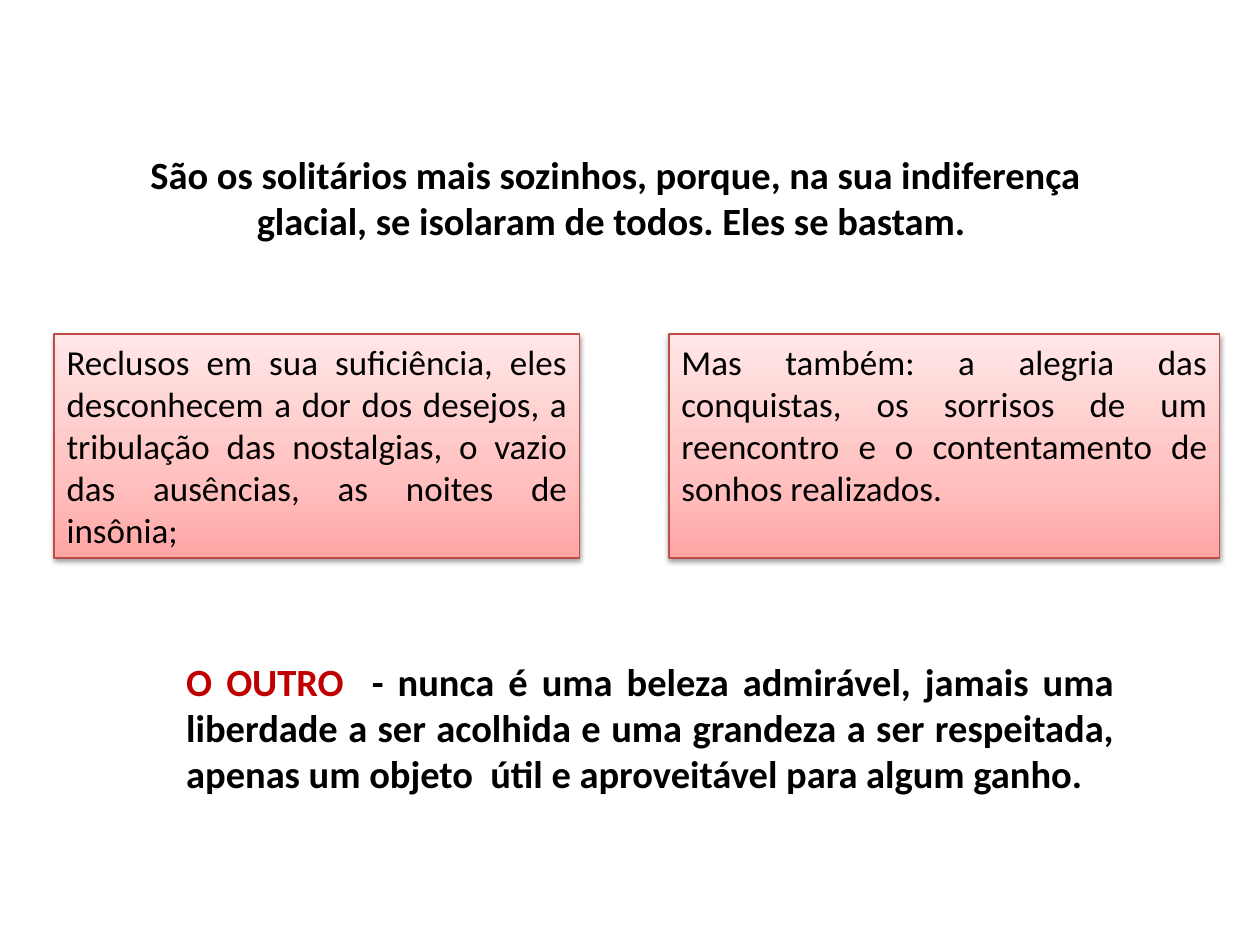
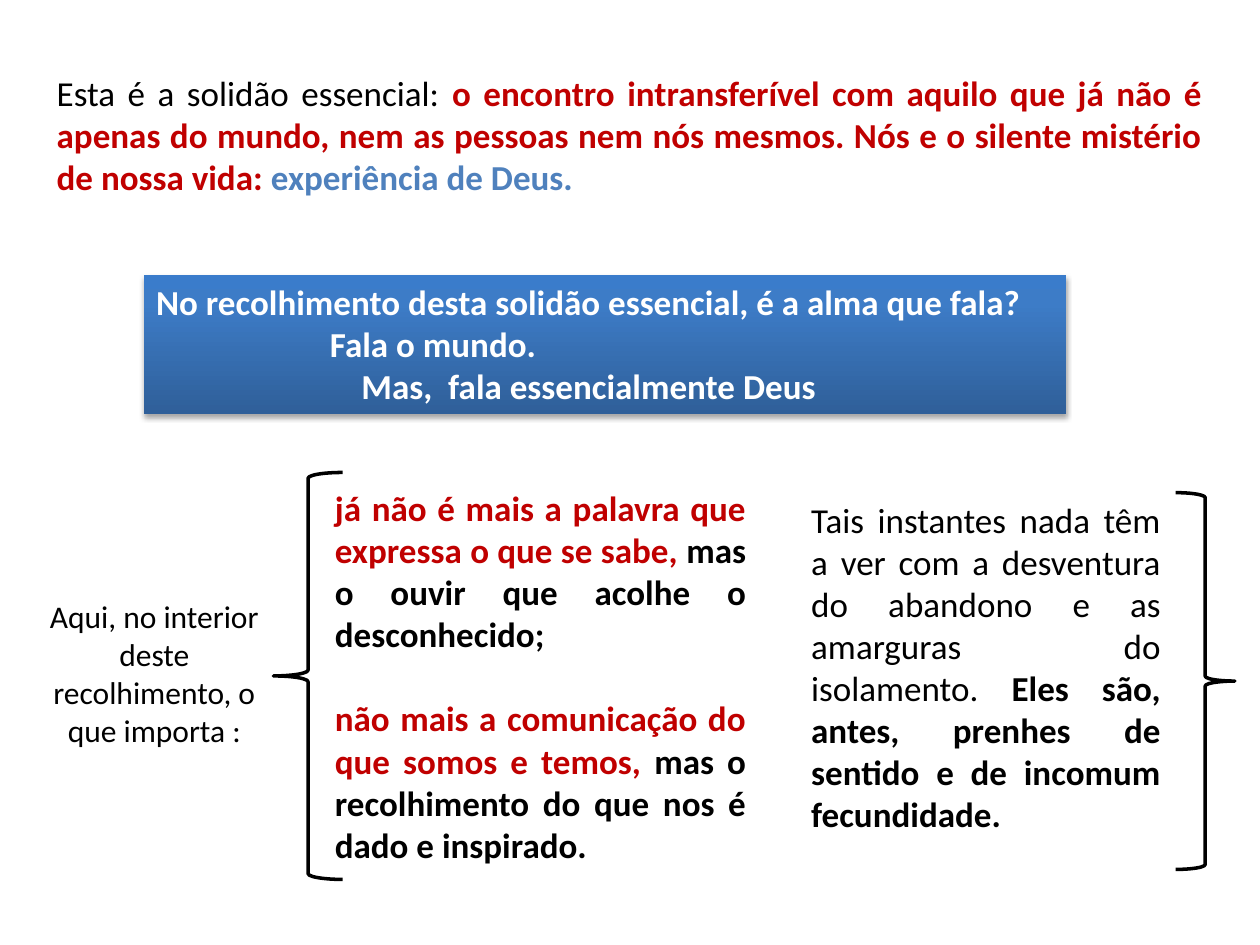
from dataclasses import dataclass

from lxml.etree import SubElement
from pptx import Presentation
from pptx.dml.color import RGBColor
from pptx.enum.shapes import MSO_SHAPE
from pptx.enum.text import MSO_ANCHOR, MSO_AUTO_SIZE, PP_ALIGN
from pptx.oxml.ns import qn
from pptx.shapes.autoshape import Shape
from pptx.slide import Slide
from pptx.util import Inches, Pt

FONT = "Calibri"
BLACK = RGBColor(0x00, 0x00, 0x00)
WHITE = RGBColor(0xFF, 0xFF, 0xFF)
RED = RGBColor(0xC0, 0x00, 0x00)
BLUE = RGBColor(0x4F, 0x81, 0xBD)
ROSE_BORDER = RGBColor(0xBF, 0x4C, 0x48)
ROSE_STOPS = (
    (0, RGBColor(0xFF, 0xA6, 0xA5)),
    (35, RGBColor(0xFF, 0xC0, 0xBF)),
    (100, RGBColor(0xFF, 0xE7, 0xE7)),
)
BLUE_STOPS = (
    (0, RGBColor(0x2F, 0x5F, 0x99)),
    (80, RGBColor(0x3D, 0x7C, 0xC7)),
    (100, RGBColor(0x3A, 0x7C, 0xCB)),
)
TITLE_ONLY = 5


@dataclass(frozen=True)
class Area:
    left: float
    top: float
    width: float
    height: float

    def lengths(self) -> tuple[int, int, int, int]:
        return (Inches(self.left), Inches(self.top),
                Inches(self.width), Inches(self.height))


@dataclass(frozen=True)
class Run:
    text: str
    color: RGBColor = BLACK
    bold: bool = False


@dataclass(frozen=True)
class Para:
    runs: tuple[Run, ...]
    align: PP_ALIGN = PP_ALIGN.JUSTIFY
    indent: float = 0
    space_before: float = 0


@dataclass(frozen=True)
class Panel:
    """Look of a shaded box with a soft shadow below it."""
    stops: tuple[tuple[int, RGBColor], ...]
    border: RGBColor | None
    shadow_opacity: int
    shadow_distance: float


ROSE_PANEL = Panel(ROSE_STOPS, ROSE_BORDER, 38, 1.6)
BLUE_PANEL = Panel(BLUE_STOPS, None, 35, 1.8)


def write(shape: Shape, paras: tuple[Para, ...], size: int = 20) -> None:
    frame = shape.text_frame
    frame.word_wrap = True
    frame.auto_size = MSO_AUTO_SIZE.NONE
    frame.vertical_anchor = MSO_ANCHOR.TOP
    for index, para in enumerate(paras):
        paragraph = frame.add_paragraph() if index else frame.paragraphs[0]
        paragraph.alignment = para.align
        if para.indent:
            paragraph._p.get_or_add_pPr().set("marL", str(Inches(para.indent)))
        if para.space_before:
            paragraph.space_before = Pt(para.space_before)
        for part in para.runs:
            run = paragraph.add_run()
            run.text = part.text
            run.font.name = FONT
            run.font.size = Pt(size)
            run.font.bold = part.bold
            run.font.color.rgb = part.color


def add_title(slide: Slide, area: Area, para: Para, size: int = 20) -> None:
    title = slide.shapes.title
    title.left, title.top, title.width, title.height = area.lengths()
    write(title, (para,), size)


def add_text(slide: Slide, area: Area, *paras: Para, size: int = 20) -> None:
    write(slide.shapes.add_textbox(*area.lengths()), paras, size)


def add_color(parent, color: RGBColor):
    return SubElement(parent, qn("a:srgbClr"), val=str(color))


def add_panel(slide: Slide, area: Area, look: Panel, *paras: Para) -> None:
    panel = slide.shapes.add_shape(MSO_SHAPE.RECTANGLE, *area.lengths())
    panel.fill.gradient()
    panel.fill.gradient_angle = 90
    properties = panel._element.spPr
    stop_list = properties.find(".//" + qn("a:gsLst"))
    for default_stop in list(stop_list):
        stop_list.remove(default_stop)
    for position, color in look.stops:
        add_color(SubElement(stop_list, qn("a:gs"), pos=str(position * 1000)), color)

    if look.border is None:
        panel.line.fill.background()
    else:
        panel.line.color.rgb = look.border
        panel.line.width = Pt(0.75)

    panel.shadow.inherit = False
    shadow = SubElement(
        properties.find(qn("a:effectLst")), qn("a:outerShdw"),
        blurRad=str(Pt(3.1)), dist=str(Pt(look.shadow_distance)),
        dir="5400000", rotWithShape="0")
    SubElement(add_color(shadow, BLACK), qn("a:alpha"),
               val=str(look.shadow_opacity * 1000))
    write(panel, paras)


def add_brace(slide: Slide, area: Area, rotation: int = 0) -> None:
    brace = slide.shapes.add_shape(MSO_SHAPE.LEFT_BRACE, *area.lengths())
    brace.rotation = rotation
    brace.fill.background()
    brace.line.color.rgb = BLACK
    brace.line.width = Pt(2)
    brace.shadow.inherit = False


def build_indifference(slide: Slide) -> None:
    add_title(slide, Area(0.75, 1.15, 8.27, 0.84), Para((
        Run("São os solitários mais sozinhos, porque, na sua indiferença "
            "glacial, se isolaram de todos. Eles se bastam. ", bold=True),
    ), PP_ALIGN.CENTER), size=22)

    losses = (
        (0.43, 4.17, "Reclusos em sua suficiência, eles desconhecem a dor dos "
                     "desejos, a tribulação das nostalgias, o vazio das "
                     "ausências, as noites de insônia;"),
        (5.31, 4.37, "Mas também: a alegria das conquistas, os sorrisos de um "
                     "reencontro e o contentamento de sonhos realizados."),
    )
    for left, width, loss in losses:
        add_panel(slide, Area(left, 2.65, width, 1.78), ROSE_PANEL,
                  Para((Run(loss),)))

    add_text(slide, Area(1.38, 5.17, 7.56, 1.21), Para((
        Run("O OUTRO  ", RED, True),
        Run("- nunca é uma beleza admirável, jamais uma liberdade a ser "
            "acolhida e uma grandeza a ser respeitada, apenas um objeto  útil "
            "e aproveitável para algum ganho.", bold=True),
    )), size=22)


def build_essential_solitude(slide: Slide) -> None:
    add_title(slide, Area(0.35, 0.52, 9.29, 1.11), Para((
        Run("Esta é a solidão essencial: "),
        Run("o encontro intransferível com aquilo que já não é apenas do "
            "mundo, nem as pessoas nem nós mesmos. Nós e o silente mistério "
            "de nossa vida: ", RED, True),
        Run("experiência de Deus.", BLUE, True),
    )))

    voices = (
        (0, "No recolhimento desta solidão essencial, é a alma que fala?"),
        (1.38, "Fala o mundo."),
        (1.63, "Mas,  fala essencialmente Deus"),
    )
    add_panel(slide, Area(1.14, 2.18, 7.32, 1.11), BLUE_PANEL, *(
        Para((Run(voice, WHITE, True),), PP_ALIGN.LEFT, indent)
        for indent, voice in voices))

    add_text(slide, Area(0.28, 4.69, 1.89, 1.31), Para((
        Run("Aqui, no interior deste recolhimento, o que importa :"),
    ), PP_ALIGN.CENTER), size=18)

    add_text(
        slide, Area(2.56, 3.81, 3.46, 3.13),
        Para((
            Run("já não é mais a palavra que expressa o que se sabe, ", RED, True),
            Run("mas o ouvir que acolhe o desconhecido;", bold=True),
        )),
        Para((
            Run("não mais a comunicação do que somos e temos, ", RED, True),
            Run("mas o recolhimento do que nos é dado e inspirado.", bold=True),
        ), space_before=24.4))

    add_text(slide, Area(6.34, 3.91, 2.97, 2.79), Para((
        Run("Tais instantes nada têm a ver com a desventura do abandono e as "
            "amarguras do isolamento. "),
        Run("Eles são, antes, prenhes de sentido e de incomum fecundidade.",
            bold=True),
    )))

    add_brace(slide, Area(2.17, 3.75, 0.55, 3.23))
    add_brace(slide, Area(9.33, 3.91, 0.47, 2.99), rotation=180)


def main() -> None:
    deck = Presentation()
    deck.slide_width, deck.slide_height = Inches(10), Inches(7.5)
    for build in (build_indifference, build_essential_solitude):
        build(deck.slides.add_slide(deck.slide_layouts[TITLE_ONLY]))
    deck.save("out.pptx")


if __name__ == "__main__":
    main()
